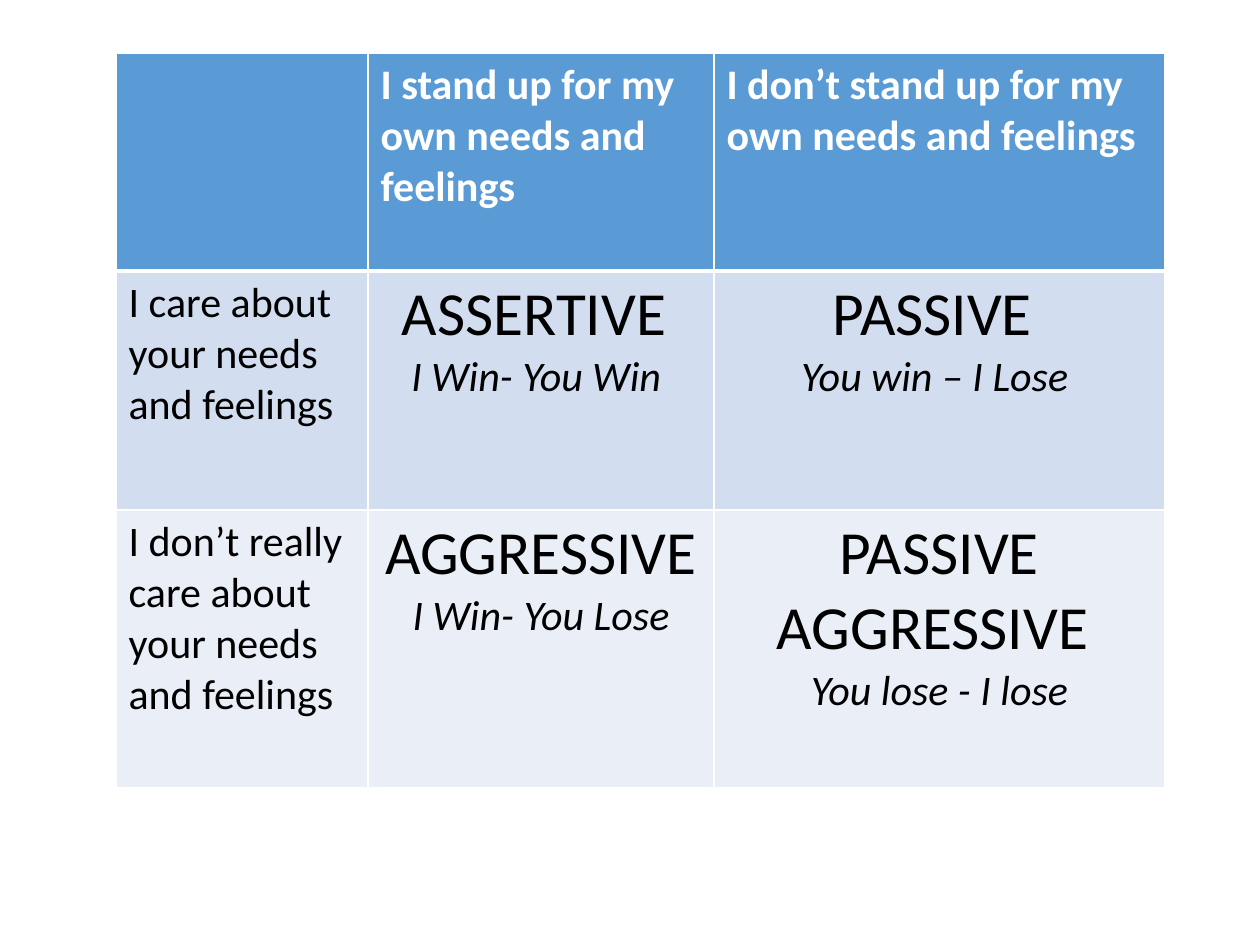
from lxml import etree
from pptx import Presentation
from pptx.dml.color import RGBColor
from pptx.enum.text import PP_ALIGN
from pptx.oxml.ns import qn
from pptx.util import Pt

EMU_PER_PX = 914400 / 126
LEFT, CENTER = PP_ALIGN.LEFT, PP_ALIGN.CENTER
WHITE = RGBColor(0xFF, 0xFF, 0xFF)
BLACK = RGBColor(0x00, 0x00, 0x00)
HEADER_BLUE = RGBColor(0x5B, 0x9B, 0xD5)
BAND_BLUE = RGBColor(0xD2, 0xDE, 0xEF)
PALE_BLUE = RGBColor(0xEA, 0xEF, 0xF7)

BASE = {"name": "Calibri", "size": Pt(24), "bold": False, "italic": False}
HEADING = {"bold": True}
STYLE_NAME = {"size": Pt(35)}
OUTCOME = {"italic": True}

COLUMN_WIDTHS = [252, 346, 451]
ROW_HEIGHTS = [218, 239, 278]
ROW_COLORS = [(HEADER_BLUE, WHITE), (BAND_BLUE, BLACK), (PALE_BLUE, BLACK)]


def px(length):
    return round(length * EMU_PER_PX)


def label(*lines, **extra):
    return [(line, LEFT, extra) for line in lines]


def behaviour(name, outcome):
    return [(name, CENTER, STYLE_NAME), (outcome, CENTER, OUTCOME)]


MATRIX = [
    [
        [],
        label("I stand up for my own needs and feelings", **HEADING),
        label("I don’t stand up for my own needs and feelings", **HEADING),
    ],
    [
        label("I care about", "your needs and feelings"),
        behaviour("ASSERTIVE ", "I Win- You Win "),
        behaviour("PASSIVE ", "You win – I Lose "),
    ],
    [
        label("I don’t really care about your needs and feelings"),
        behaviour("AGGRESSIVE ", "I Win- You Lose"),
        behaviour("PASSIVE AGGRESSIVE ", "You lose - I lose"),
    ],
]


class PageBuilder:
    def __init__(self, page):
        self.page = page

    def table(self, left, top, widths, heights, rows, row_colors):
        frame = self.page.shapes.add_table(
            len(heights), len(widths), px(left), px(top),
            px(sum(widths)), px(sum(heights)))
        table = frame.table
        for column, width in zip(table.columns, widths):
            column.width = px(width)
        for row, height, contents, colors in zip(
                table.rows, heights, rows, row_colors):
            row.height = px(height)
            for cell, paragraphs in zip(row.cells, contents):
                self.fill_cell(cell, paragraphs, *colors)
        for index, row in enumerate(table.rows):
            for cell in row.cells:
                self.borders(cell, {
                    "lnL": 1, "lnR": 1,
                    "lnT": 3 if index == 1 else 1,
                    "lnB": 3 if index == 0 else 1,
                })

    def fill_cell(self, cell, paragraphs, background, color):
        cell.fill.solid()
        cell.fill.fore_color.rgb = background
        box = cell.text_frame
        for index, (text, alignment, extra) in enumerate(paragraphs):
            para = box.add_paragraph() if index else box.paragraphs[0]
            para.alignment = alignment
            span = para.add_run()
            span.text = text
            for key, value in {**BASE, **extra}.items():
                setattr(span.font, key, value)
            span.font.color.rgb = color

    def borders(self, cell, widths):
        """Add white edges ahead of the fill, as the schema requires."""
        properties = cell._tc.get_or_add_tcPr()
        for position, (edge, width) in enumerate(widths.items()):
            line = etree.Element(qn(f"a:{edge}"), w=str(Pt(width)))
            fill = etree.SubElement(line, qn("a:solidFill"))
            etree.SubElement(fill, qn("a:srgbClr"), val=str(WHITE))
            properties.insert(position, line)


def main():
    deck = Presentation()
    deck.slide_width, deck.slide_height = px(1260), px(945)
    page = deck.slides.add_slide(deck.slide_layouts[6])
    builder = PageBuilder(page)
    builder.table(116, 53, COLUMN_WIDTHS, ROW_HEIGHTS, MATRIX, ROW_COLORS)
    deck.save("out.pptx")


if __name__ == "__main__":
    main()
